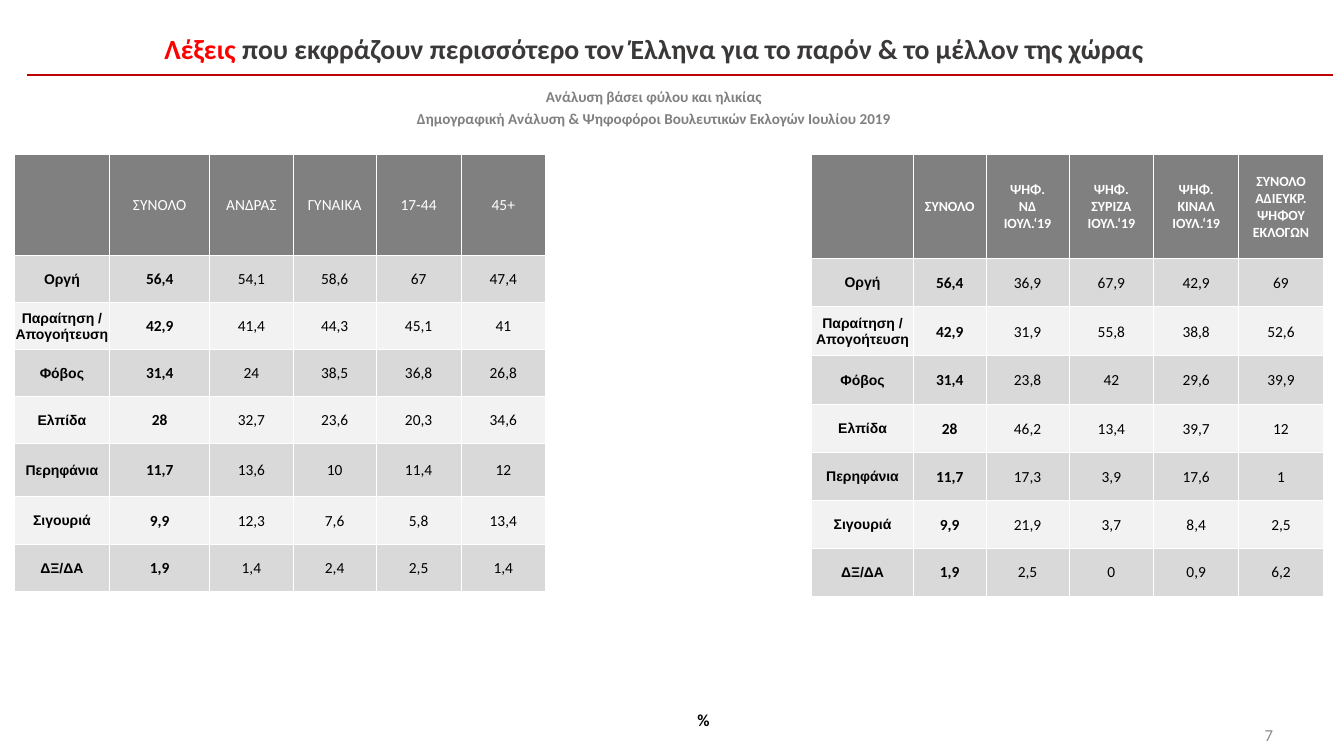
from lxml.etree import SubElement
from pptx import Presentation
from pptx.dml.color import RGBColor
from pptx.enum.shapes import MSO_CONNECTOR
from pptx.enum.text import MSO_ANCHOR, PP_ALIGN
from pptx.oxml.ns import qn
from pptx.util import Pt

COLOURS = {
    "red": "FF0000", "rule": "C00000", "title": "3B3838", "subtitle": "808080",
    "header": "808080", "dark_band": "D9D9D9", "light_band": "F2F2F2",
    "white": "FFFFFF", "black": "000000", "page": "8C8C8C",
}


def text_format(size, colour, bold=False, name="Calibri"):
    return {"size": Pt(size), "bold": bold, "name": name, "colour": colour}


TITLE = text_format(19.8, "title", True)
TITLE_RED = text_format(19.8, "red", True)
SUBTITLE = text_format(10.8, "subtitle", True)
UNIT = text_format(12, "black", True)
PAGE = text_format(12, "page")
HEADER = text_format(11, "white")
VOTER_HEADER = text_format(10, "white", True)
ROW_LABEL = text_format(10, "black", True, "Arial")
TOTAL = text_format(11, "black", True)
VALUE = text_format(11, "black")

WORDS = ["Οργή", "Παραίτηση / Απογοήτευση", "Φόβος", "Ελπίδα",
         "Περηφάνια", "Σιγουριά", "ΔΞ/ΔΑ"]
TOTALS = ["56,4", "42,9", "31,4", "28", "11,7", "9,9", "1,9"]

DEMOGRAPHICS = {
    "left": 10, "widths": [68.4, 71.4, 59.6, 59.4, 60.6, 60.4],
    "heights": [72, 33.6, 33.6, 33.6, 33.6, 37.7, 34.3, 33.6],
    "header_format": HEADER,
    "headers": ["ΑΝΔΡΑΣ", "ΓΥΝΑΙΚΑ", "17-44", "45+"],
    "values": [
        ["54,1", "58,6", "67", "47,4"],
        ["41,4", "44,3", "45,1", "41"],
        ["24", "38,5", "36,8", "26,8"],
        ["32,7", "23,6", "20,3", "34,6"],
        ["13,6", "10", "11,4", "12"],
        ["12,3", "7,6", "5,8", "13,4"],
        ["1,4", "2,4", "2,5", "1,4"],
    ],
}
VOTERS = {
    "left": 579.8, "widths": [72.6, 52, 59.2, 60.6, 60.6, 60.6],
    "heights": [74.2, 34.5, 35, 35, 34.2, 34.2, 34.2, 34],
    "header_format": VOTER_HEADER,
    "headers": ["ΨΗΦ.\nΝΔ\nΙΟΥΛ.‘19", "ΨΗΦ.\nΣΥΡΙΖΑ\nΙΟΥΛ.‘19",
                "ΨΗΦ.\nΚΙΝΑΛ\nΙΟΥΛ.‘19", "ΣΥΝΟΛΟ\nΑΔΙΕΥΚΡ.\nΨΗΦΟΥ\nΕΚΛΟΓΩΝ"],
    "values": [
        ["36,9", "67,9", "42,9", "69"],
        ["31,9", "55,8", "38,8", "52,6"],
        ["23,8", "42", "29,6", "39,9"],
        ["46,2", "13,4", "39,7", "12"],
        ["17,3", "3,9", "17,6", "1"],
        ["21,9", "3,7", "8,4", "2,5"],
        ["2,5", "0", "0,9", "6,2"],
    ],
}


def rgb(colour):
    return RGBColor.from_string(COLOURS[colour])


def apply_format(font, values):
    for attribute, value in values.items():
        if attribute == "colour":
            font.color.rgb = rgb(value)
        else:
            setattr(font, attribute, value)


def add_text(slide, box, paragraphs, alignment, anchor=MSO_ANCHOR.TOP, wrap=True):
    """Each paragraph is a list of (text, format) runs."""
    frame = slide.shapes.add_textbox(*map(Pt, box)).text_frame
    frame.word_wrap = wrap
    frame.vertical_anchor = anchor
    for index, runs in enumerate(paragraphs):
        paragraph = frame.add_paragraph() if index else frame.paragraphs[0]
        paragraph.alignment = alignment
        for text, values in runs:
            run = paragraph.add_run()
            run.text = text
            apply_format(run.font, values)
    return frame


def add_rule(slide, left, right, top):
    rule = slide.shapes.add_connector(
        MSO_CONNECTOR.STRAIGHT, Pt(left), Pt(top), Pt(right), Pt(top))
    rule.line.color.rgb = rgb("rule")
    rule.line.width = Pt(1.5)
    SubElement(rule._element.spPr, qn("a:effectLst"))


def add_borders(cell):
    properties = cell._tc.get_or_add_tcPr()
    for side in ("lnL", "lnR", "lnT", "lnB"):
        line = SubElement(properties, qn(f"a:{side}"), w=str(Pt(0.5)))
        fill = SubElement(line, qn("a:solidFill"))
        SubElement(fill, qn("a:srgbClr"), val=COLOURS["white"])


def fill_cell(cell, text, values, background):
    add_borders(cell)
    cell.fill.solid()
    cell.fill.fore_color.rgb = rgb(background)
    cell.vertical_anchor = MSO_ANCHOR.MIDDLE
    for side in ("left", "right", "top"):
        setattr(cell, f"margin_{side}", Pt(0.72))
    cell.margin_bottom = Pt(0)
    cell.text_frame.text = text
    for paragraph in cell.text_frame.paragraphs:
        paragraph.alignment = PP_ALIGN.CENTER
        apply_format(paragraph.font, values)
        for run in paragraph.runs:
            apply_format(run.font, values)


def add_word_table(slide, data):
    rows = [["", "ΣΥΝΟΛΟ", *data["headers"]]]
    rows += [[word, total, *values]
             for word, total, values in zip(WORDS, TOTALS, data["values"])]
    widths, heights = data["widths"], data["heights"]
    table = slide.shapes.add_table(
        len(rows), len(widths), Pt(data["left"]), Pt(110.4),
        Pt(sum(widths)), Pt(sum(heights))).table
    for column, width in zip(table.columns, widths):
        column.width = Pt(width)
    for row, height in zip(table.rows, heights):
        row.height = Pt(height)
    for row_index, texts in enumerate(rows):
        band = "dark_band" if row_index % 2 else "light_band"
        body_formats = [ROW_LABEL, TOTAL] + [VALUE] * len(data["headers"])
        for column_index, text in enumerate(texts):
            cell = table.cell(row_index, column_index)
            if row_index == 0:
                fill_cell(cell, text, data["header_format"], "header")
            else:
                fill_cell(cell, text, body_formats[column_index], band)


def main():
    presentation = Presentation()
    presentation.slide_width, presentation.slide_height = Pt(960), Pt(540)
    slide = presentation.slides.add_slide(presentation.slide_layouts[6])

    # Title with its rule
    add_rule(slide, 19.4, 952, 53.3)
    heading = add_text(slide, (0, 11.5, 934, 90), [
        [("Λέξεις", TITLE_RED),
         (" που εκφράζουν περισσότερο τον Έλληνα για το παρόν & το μέλλον της χώρας", TITLE)],
        [("Ανάλυση βάσει φύλου και ηλικίας", SUBTITLE)],
        [("Δημογραφική Ανάλυση & Ψηφοφόροι Βουλευτικών Εκλογών Ιουλίου 2019", SUBTITLE)],
    ], PP_ALIGN.CENTER)
    heading.margin_top = Pt(6.7)
    for paragraph in heading.paragraphs:
        paragraph.line_spacing = 1.2
    heading.paragraphs[1].space_before = Pt(13)

    # Tables
    add_word_table(slide, DEMOGRAPHICS)
    add_word_table(slide, VOTERS)

    # Unit and page number
    add_text(slide, (491, 503.3, 23, 21.8), [[("%", UNIT)]], PP_ALIGN.LEFT, wrap=False)
    add_text(slide, (716.4, 507, 200, 36), [[("7", PAGE)]], PP_ALIGN.RIGHT,
             MSO_ANCHOR.MIDDLE)

    presentation.save("out.pptx")


if __name__ == "__main__":
    main()
